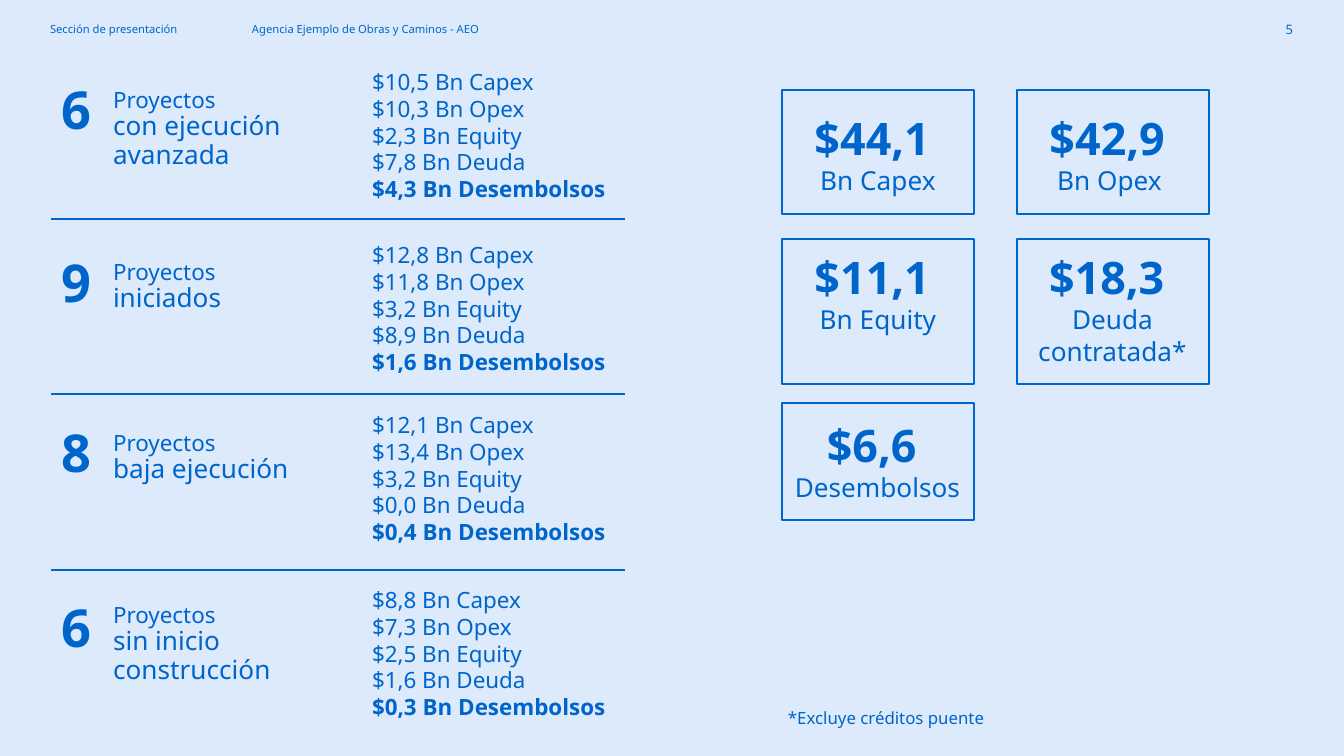
from pptx import Presentation
from pptx.dml.color import RGBColor
from pptx.enum.shapes import MSO_CONNECTOR, MSO_SHAPE
from pptx.enum.text import MSO_ANCHOR, PP_ALIGN
from pptx.oxml.ns import qn
from pptx.util import Emu, Pt
from lxml.etree import SubElement

EMU_PER_PX = 914400 / 134.4
INK = "0065CB"
FRAME = "0066CD"
BACKGROUND = "DCEAFB"

PHASES = [
    ("6", "con ejecución avanzada", (70, 82, 61), 99,
     ["$10,5 Bn Capex", "$10,3 Bn Opex", "$2,3 Bn Equity", "$7,8 Bn Deuda", "$4,3 Bn Desembolsos"]),
    ("9", "iniciados", (243, 254, 234), 66,
     ["$12,8 Bn Capex", "$11,8 Bn Opex", "$3,2 Bn Equity", "$8,9 Bn Deuda", "$1,6 Bn Desembolsos"]),
    ("8", "baja ejecución", (413, 425, 404), 66,
     ["$12,1 Bn Capex", "$13,4 Bn Opex", "$3,2 Bn Equity", "$0,0 Bn Deuda", "$0,4 Bn Desembolsos"]),
    ("6", "sin inicio construcción", (588, 597, 579), 95,
     ["$8,8 Bn Capex", "$7,3 Bn Opex", "$2,5 Bn Equity", "$1,6 Bn Deuda", "$0,3 Bn Desembolsos"]),
]
DIVIDERS = [219, 394, 570]

CARD_COLUMNS = [782, 1017]
CARD_WIDTH = 192
CARD_ROWS = [(90, 124, 104), (239, 145, 243), (403, 117, 411)]
TOTALS = [
    ("$44,1 ", "Bn Capex", 156, 99),
    ("$42,9 ", "Bn Opex ", 156, 99),
    ("$11,1 ", "Bn Equity", 156, 99),
    ("$18,3 ", "Deuda contratada*", 183, 132),
    ("$6,6 ", "Desembolsos", 207, 99),
]


def px(length):
    return Emu(round(length * EMU_PER_PX))


def color(value):
    return RGBColor.from_string(value)


class SlideBuilder:
    font = "Noto Sans"

    def __init__(self, slide):
        self.slide = slide
        fill = slide.background.fill
        fill.solid()
        fill.fore_color.rgb = color(BACKGROUND)

    def text(self, left, top, width, height, lines, align=PP_ALIGN.LEFT, ink=INK,
             spacing=None, wrap=True, anchor=MSO_ANCHOR.TOP, insets=(13, 7)):
        box = self.slide.shapes.add_textbox(px(left), px(top), px(width), px(height))
        frame = box.text_frame
        frame.word_wrap = wrap
        frame.vertical_anchor = anchor
        frame.margin_left = frame.margin_right = px(insets[0])
        frame.margin_top = frame.margin_bottom = px(insets[1])
        frame.text = "\n".join(words for words, size, bold in lines)
        for para, (words, size, bold) in zip(frame.paragraphs, lines):
            para.alignment = align
            para.line_spacing = spacing
            for span in para.runs:
                span.font.name = self.font
                span.font.size = Pt(size)
                span.font.bold = bold
                span.font.color.rgb = color(ink)

    def header(self, left, width, words):
        self.text(left, 16, width, 27, [(words, 6, False)], ink=FRAME,
                  anchor=MSO_ANCHOR.MIDDLE, insets=(9, 5))

    def page_number(self, words):
        self.text(1226, 0, 80, 58, [(words, 7, False)], PP_ALIGN.RIGHT, FRAME,
                  anchor=MSO_ANCHOR.MIDDLE, insets=(13, 13))

    def divider(self, left, right, top):
        line = self.slide.shapes.add_connector(
            MSO_CONNECTOR.STRAIGHT, px(left), px(top), px(right), px(top))
        line.line.color.rgb = color(INK)
        line.line.width = Pt(0.75)
        SubElement(line.element.spPr, qn("a:effectLst"))

    def frame(self, left, top, width, height):
        shape = self.slide.shapes.add_shape(
            MSO_SHAPE.RECTANGLE, px(left), px(top), px(width), px(height))
        shape.shadow.inherit = False
        shape.fill.background()
        shape.line.color.rgb = color(FRAME)
        shape.line.width = Pt(1)

    def phase(self, count, name, tops, height, amounts):
        count_top, name_top, amounts_top = tops
        self.text(100, name_top, 224, height,
                  [("Proyectos", 12, False), (name, 14, False)], spacing=0.9)
        self.text(45, count_top, 59, 77, [(count, 28, True)], PP_ALIGN.RIGHT, wrap=False)
        lines = [(amount, 12, amount == amounts[-1]) for amount in amounts]
        self.text(359, amounts_top, 313, 153, lines)

    def total(self, left, row, value, label, width, height):
        top, frame_height, text_top = row
        self.text(left + (CARD_WIDTH - width) // 2, text_top, width, height,
                  [(value, 24, True), (label, 14, False)], PP_ALIGN.CENTER)
        self.frame(left, top, CARD_WIDTH, frame_height)


def main():
    deck = Presentation()
    deck.slide_width = px(1344)
    deck.slide_height = px(756)
    page = SlideBuilder(deck.slides.add_slide(deck.slide_layouts[6]))

    page.page_number("5")
    page.header(243, 273, "Agencia Ejemplo de Obras y Caminos - AEO")
    page.header(41, 163, "Sección de presentación")
    for phase in PHASES:
        page.phase(*phase)
    for top in DIVIDERS:
        page.divider(51, 625, top)
    for index, total in enumerate(TOTALS):
        row, column = divmod(index, len(CARD_COLUMNS))
        page.total(CARD_COLUMNS[column], CARD_ROWS[row], *total)
    page.text(775, 701, 267, 34, [("*Excluye créditos puente", 9, False)])
    deck.save("out.pptx")


if __name__ == "__main__":
    main()
